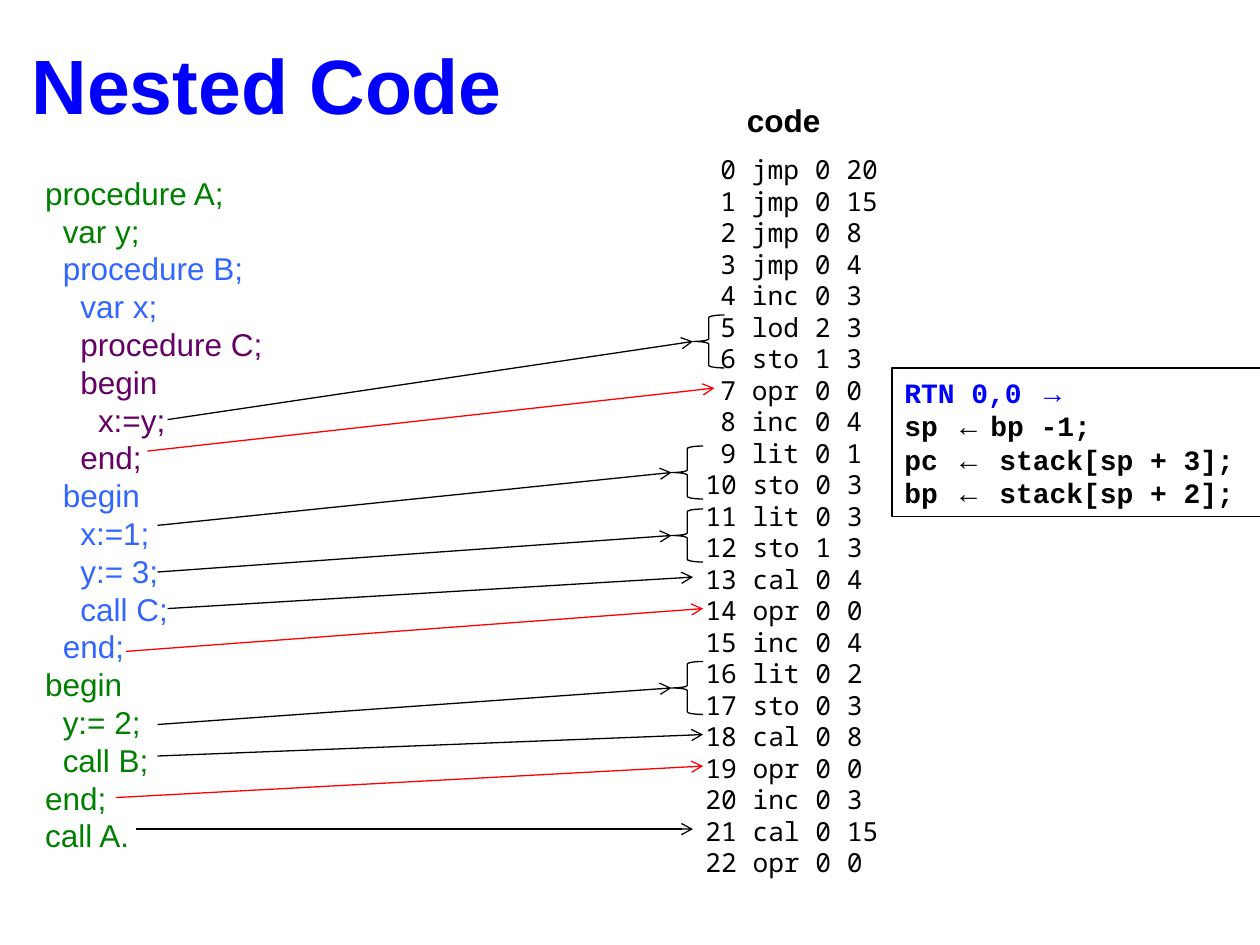
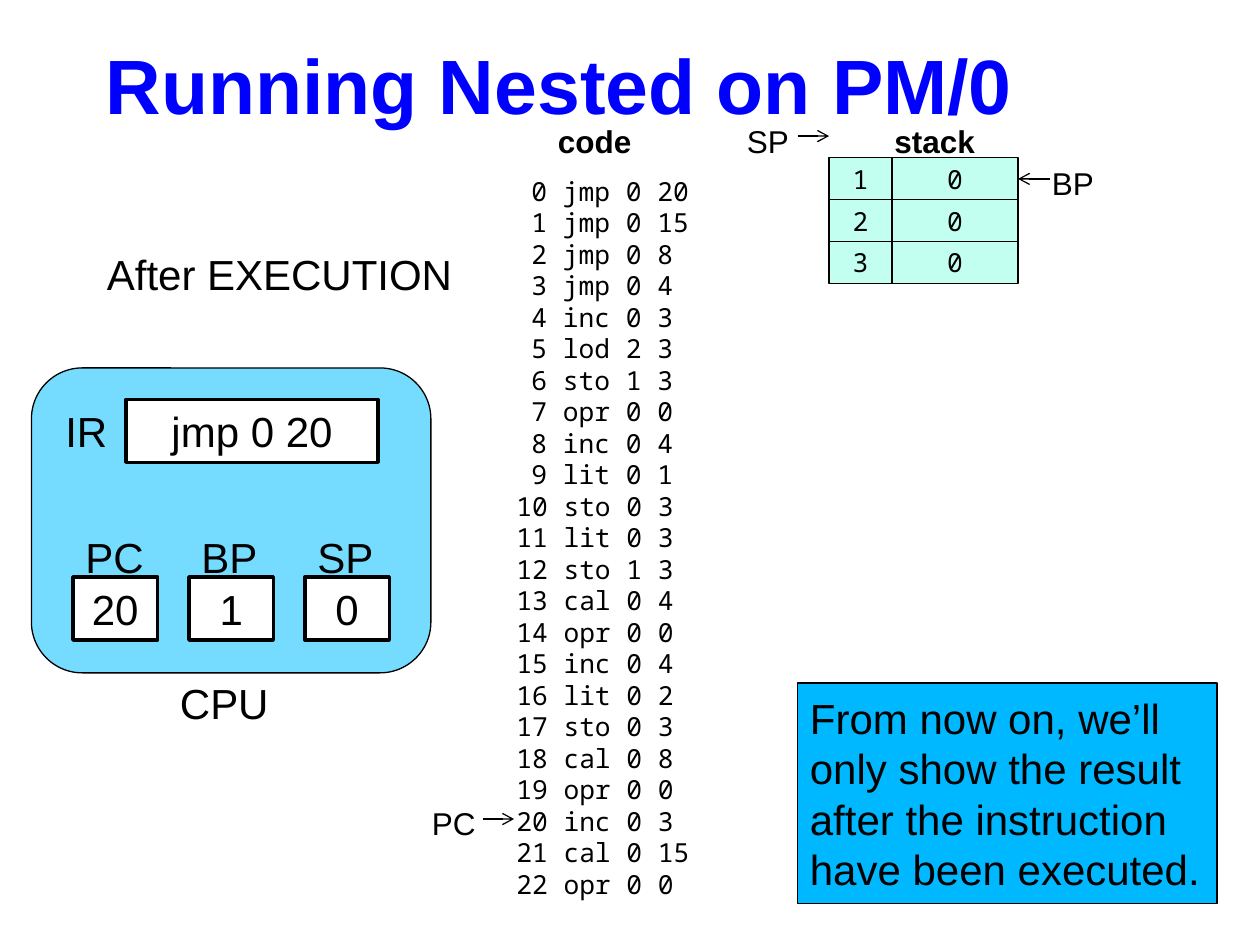
from lxml import etree
from pptx import Presentation
from pptx.dml.color import RGBColor
from pptx.enum.shapes import MSO_CONNECTOR, MSO_SHAPE
from pptx.enum.text import MSO_ANCHOR, MSO_AUTO_SIZE, PP_ALIGN
from pptx.oxml.ns import qn
from pptx.util import Inches, Pt

RECTANGLE = MSO_SHAPE.RECTANGLE
ROUNDED = MSO_SHAPE.ROUNDED_RECTANGLE
BRACE = MSO_SHAPE.LEFT_BRACE
STRAIGHT = MSO_CONNECTOR.STRAIGHT
LEFT, CENTER = PP_ALIGN.LEFT, PP_ALIGN.CENTER
TOP, MIDDLE = MSO_ANCHOR.TOP, MSO_ANCHOR.MIDDLE
FIXED_SIZE = MSO_AUTO_SIZE.NONE
TITLE_ONLY = 5

COLORS = {
    "black": "000000", "white": "FFFFFF", "blue": "0000FF", "red": "FF0000",
    "procedure_a": "008000", "procedure_b": "3366FF", "procedure_c": "660066",
    "cpu": "75DBFF", "stack": "C2FFF0", "note": "00B8FF",
}
STYLES = {
    "title": {"name": "Arial", "size": 44, "bold": True, "color": "blue"},
    "heading": {"name": "Arial", "size": 18, "bold": True, "color": "black"},
    "label": {"name": "Arial", "size": 18, "bold": False, "color": "black"},
    "large": {"name": "Arial", "size": 24, "bold": False, "color": "black"},
    "code": {"name": "Noto Sans Mono", "size": 15, "bold": False, "color": "black"},
    "rule": {"name": "Courier New", "size": 16, "bold": True, "color": "black"},
}
LINE_SPACING = 1.2
SOURCE_INDENT = 0.14
DIGIT_WIDTH = 0.12

# Instructions of the compiled program, numbered from 0
INSTRUCTIONS = [
    "jmp 0 20", "jmp 0 15", "jmp 0 8", "jmp 0 4", "inc 0 3", "lod 2 3",
    "sto 1 3", "opr 0 0", "inc 0 4", "lit 0 1", "sto 0 3", "lit 0 3",
    "sto 1 3", "cal 0 4", "opr 0 0", "inc 0 4", "lit 0 2", "sto 0 3",
    "cal 0 8", "opr 0 0", "inc 0 3", "cal 0 15", "opr 0 0",
]

# Source program: colour, nesting level, text
SOURCE_LINES = [
    ("procedure_a", 0, "procedure A;"),
    ("procedure_a", 1, "var y;"),
    ("procedure_b", 1, "procedure B;"),
    ("procedure_b", 2, "var x;"),
    ("procedure_c", 2, "procedure C;"),
    ("procedure_c", 2, "begin"),
    ("procedure_c", 3, "x:=y;"),
    ("procedure_c", 2, "end;"),
    ("procedure_b", 1, "begin"),
    ("procedure_b", 2, "x:=1;"),
    ("procedure_b", 2, "y:= 3;"),
    ("procedure_b", 2, "call C;"),
    ("procedure_b", 1, "end;"),
    ("procedure_a", 0, "begin"),
    ("procedure_a", 1, "y:= 2;"),
    ("procedure_a", 1, "call B;"),
    ("procedure_a", 0, "end;"),
    ("procedure_a", 0, "call A."),
]

# Statements that compile to two instructions: arrow start, brace corner
BRACE_LINKS = [
    ((1.33, 3.33), (5.5, 2.5)),
    ((1.25, 4.17), (5.33, 3.54)),
    ((1.25, 4.54), (5.33, 4.04)),
    ((1.25, 5.75), (5.33, 5.25)),
]
# Statements that compile to one instruction: arrow start, end, colour
CALL_AND_RETURN_LINKS = [
    ((1.33, 4.83), (5.5, 4.58), "black"),
    ((1.25, 6), (5.58, 5.83), "black"),
    ((1.08, 6.58), (5.5, 6.58), "black"),
    ((1.17, 3.58), (5.67, 3.08), "red"),
    ((1, 5.17), (5.58, 4.83), "red"),
    ((0.92, 6.33), (5.58, 6.08), "red"),
]


def rgb(color):
    return RGBColor.from_string(COLORS[color])


class Deck:
    """Holds the presentation, its style and the current slide."""

    def __init__(self):
        self.presentation = Presentation()
        self.presentation.slide_width = Inches(10)
        self.presentation.slide_height = Inches(7.5)
        self.slide = None

    def new_slide(self, title, left):
        layout = self.presentation.slide_layouts[TITLE_ONLY]
        self.slide = self.presentation.slides.add_slide(layout)
        shape = self.slide.shapes.title
        place = {"left": left, "top": 0.25, "width": 8.3, "height": 0.84}
        for side, length in place.items():
            setattr(shape, side, Inches(length))
        self.fill_text(shape, title, "title")

    def fill_text(self, shape, content, style, align=LEFT, anchor=TOP):
        """Content is a string or a list of (indent, runs); a run is (text, changes)."""
        if isinstance(content, str):
            content = [(0, [(content, {})])]
        frame = shape.text_frame
        settings = {"word_wrap": True, "auto_size": FIXED_SIZE, "vertical_anchor": anchor}
        for name, value in settings.items():
            setattr(frame, name, value)
        for index, (indent, runs) in enumerate(content):
            paragraph = frame.add_paragraph() if index else frame.paragraphs[0]
            paragraph.alignment = align
            paragraph.line_spacing = Pt(STYLES[style]["size"] * LINE_SPACING)
            if indent:
                properties = paragraph._p.get_or_add_pPr()
                properties.set("marL", str(Inches(indent)))
            for text, changes in runs:
                run = paragraph.add_run()
                run.text = text
                self.format_font(run.font, {**STYLES[style], **changes})

    def format_font(self, font, values):
        for name, value in values.items():
            if name == "color":
                font.color.rgb = rgb(value)
            else:
                setattr(font, name, Pt(value) if name == "size" else value)

    def text(self, box, content, style):
        shape = self.slide.shapes.add_textbox(*map(Inches, box))
        self.fill_text(shape, content, style)

    def shape(self, kind, box, fill=None, line_width=0.75):
        shape = self.slide.shapes.add_shape(kind, *map(Inches, box))
        shape.shadow.inherit = False
        if fill:
            shape.fill.solid()
            shape.fill.fore_color.rgb = rgb(fill)
        else:
            shape.fill.background()
        shape.line.color.rgb = rgb("black")
        shape.line.width = Pt(line_width)
        return shape

    def cell(self, box, content, style, fill, line_width=0.75):
        shape = self.shape(RECTANGLE, box, fill, line_width)
        self.fill_text(shape, content, style, CENTER, MIDDLE)

    def panel(self, box, content, style, fill=None):
        shape = self.shape(RECTANGLE, box, fill)
        self.fill_text(shape, content, style, LEFT, MIDDLE)

    def arrow(self, start, end, color="black"):
        points = map(Inches, (*start, *end))
        connector = self.slide.shapes.add_connector(STRAIGHT, *points)
        connector.line.color.rgb = rgb(color)
        connector.line.width = Pt(0.75)
        line = connector.line._get_or_add_ln()
        etree.SubElement(line, qn("a:tailEnd"), type="arrow")
        etree.SubElement(connector._element.spPr, qn("a:effectLst"))

    def code_listing(self, left, top):
        """Heading and instructions, with one-digit addresses set in by a digit."""
        self.text((left + 0.33, top - 0.42, 0.9, 0.4), "code", "heading")
        lines = [(DIGIT_WIDTH if address < 10 else 0, [(f"{address} {instruction}", {})])
                 for address, instruction in enumerate(INSTRUCTIONS)]
        self.text((left, top, 2.33, 6.16), lines, "code")


def build_nested_code(deck):
    deck.new_slide("Nested Code", 0.15)

    # Source program and compiled code
    source = [(level * SOURCE_INDENT, [(text, {"color": color})])
              for color, level, text in SOURCE_LINES]
    deck.text((0.26, 1.33, 2.2, 5.5), source, "label")
    deck.code_listing(5.5, 1.17)

    # Links from statements to instructions
    brace_width, brace_height = 0.25, 0.42
    for start, (left, top) in BRACE_LINKS:
        deck.shape(BRACE, (left, top, brace_width, brace_height))
        deck.arrow(start, (left, top + brace_height / 2))
    for start, end, color in CALL_AND_RETURN_LINKS:
        deck.arrow(start, end, color)

    # Meaning of the return instruction
    symbol = {"name": "Arial"}
    rule = [(0, [("RTN 0,0 ", {"color": "blue"}), ("→", {"color": "blue", **symbol})]),
            (0, [("sp ", {}), ("← ", symbol), ("bp -1;", {})])]
    for register, offset in (("pc", 3), ("bp", 2)):
        rule.append((0, [(f"{register} ", {}), ("←", symbol),
                         (f" stack[sp + {offset}];", {})]))
    deck.panel((7.08, 2.92, 3.17, 1.18), rule, "rule")


def build_running_nested(deck):
    deck.new_slide("Running Nested on PM/0", 0.74)
    deck.code_listing(4, 1.34)
    deck.text((0.75, 1.92, 3.08, 0.5), "After EXECUTION", "large")

    # CPU with its registers
    deck.shape(ROUNDED, (0.25, 2.92, 3.17, 2.42), "cpu")
    deck.text((0.42, 3.17, 0.83, 0.5), "IR", "large")
    deck.cell((1, 3.17, 2, 0.5), "jmp 0 20", "large", "white", 2)
    for index, (register, value) in enumerate((("PC", "20"), ("BP", "1"), ("SP", "0"))):
        left = 0.58 + index * 0.92
        deck.text((left, 4.17, 0.83, 0.5), register, "large")
        deck.cell((left, 4.58, 0.67, 0.5), value, "large", "white", 2)
    deck.text((1.33, 5.33, 1, 0.5), "CPU", "large")

    # Stack: address and value
    deck.text((7, 0.92, 0.95, 0.41), "stack", "heading")
    row_height = 1 / 3
    for row, value in enumerate("000"):
        top = 1.25 + row * row_height
        deck.cell((6.58, top, 0.5, row_height), str(row + 1), "code", "stack")
        deck.cell((7.08, top, 1, row_height), value, "code", "stack")

    # Register pointers
    pointers = [
        ("PC", (3.33, 6.33), (3.83, 6.5), (4.08, 6.5)),
        ("SP", (5.83, 0.92), (6.33, 1.08), (6.58, 1.08)),
        ("BP", (8.25, 1.25), (8.33, 1.42), (8.08, 1.42)),
    ]
    for register, corner, start, end in pointers:
        deck.text((*corner, 0.67, 0.4), register, "label")
        deck.arrow(start, end)

    # Note
    deck.panel((6.33, 5.42, 3.33, 1.75), "From now on, we’ll only show the result "
               "after the instruction have been executed.", "large", "note")


def main():
    deck = Deck()
    build_nested_code(deck)
    build_running_nested(deck)
    deck.presentation.save("out.pptx")


if __name__ == "__main__":
    main()
